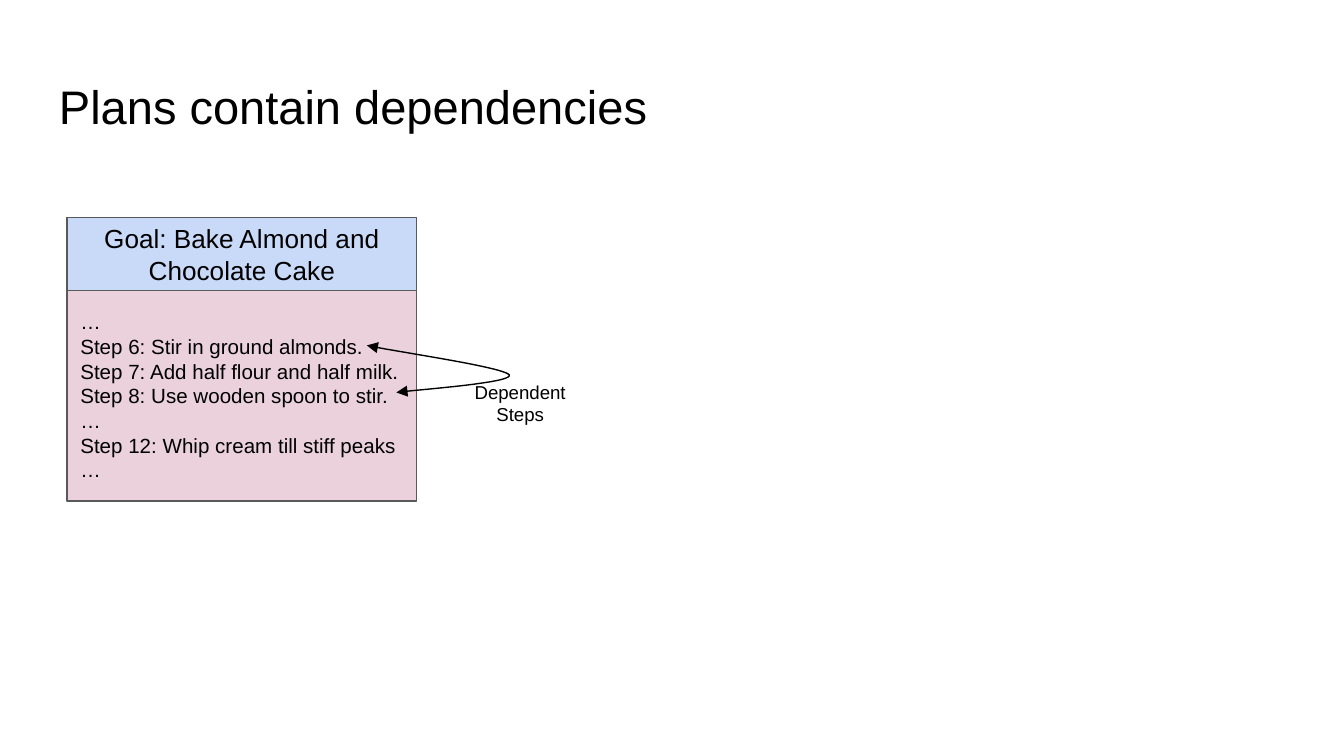
from lxml import etree
from pptx import Presentation
from pptx.dml.color import RGBColor
from pptx.enum.shapes import MSO_SHAPE
from pptx.enum.text import MSO_ANCHOR, PP_ALIGN
from pptx.oxml.ns import qn
from pptx.util import Inches, Pt

RECTANGLE = MSO_SHAPE.RECTANGLE
TOP, MIDDLE = MSO_ANCHOR.TOP, MSO_ANCHOR.MIDDLE
LEFT, CENTER = PP_ALIGN.LEFT, PP_ALIGN.CENTER

FONT = "Arial"
COLORS = {
    "text": "000000",
    "goal": "C9DAF8",
    "steps": "EAD1DC",
    "border": "595959",
    "arrow": "000000",
}
PLAN_LEFT, PLAN_TOP, PLAN_WIDTH = 0.5, 1.62, 2.6
GOAL_HEIGHT, STEPS_HEIGHT = 0.54, 1.57
STEPS = [
    "…",
    "Step 6: Stir in ground almonds.",
    "Step 7: Add half flour and half milk.",
    "Step 8: Use wooden spoon to stir.",
    "…",
    "Step 12: Whip cream till stiff peaks",
    "…",
]
DEPENDENCY_CURVES = [
    [(2.73, 2.57), (2.9, 2.61), (3.75, 2.73), (3.79, 2.79)],
    [(3.79, 2.79), (3.82, 2.85), (3.09, 2.9), (2.95, 2.92)],
]
CURVE_STEPS = 24


def color(name):
    return RGBColor.from_string(COLORS[name])


def write_text(shape, lines, size, alignment=LEFT, anchor=TOP):
    text_frame = shape.text_frame
    text_frame.word_wrap = True
    text_frame.vertical_anchor = anchor
    text_frame.margin_left = text_frame.margin_right = Inches(0.1)
    text_frame.margin_top = text_frame.margin_bottom = Inches(0.1)
    text_frame.text = "\n".join(lines)
    for paragraph in text_frame.paragraphs:
        paragraph.alignment = alignment
        for run in paragraph.runs:
            run.font.name = FONT
            run.font.size = Pt(size)
            run.font.color.rgb = color("text")


def add_label(slide, box, lines, size, alignment=LEFT):
    label = slide.shapes.add_textbox(*map(Inches, box))
    write_text(label, lines, size, alignment)


def add_panel(group, top, height, fill, lines, size, alignment):
    box = (PLAN_LEFT, top, PLAN_WIDTH, height)
    panel = group.shapes.add_shape(RECTANGLE, *map(Inches, box))
    panel.shadow.inherit = False
    panel.fill.solid()
    panel.fill.fore_color.rgb = color(fill)
    panel.line.color.rgb = color("border")
    panel.line.width = Pt(0.75)
    write_text(panel, lines, size, alignment, MIDDLE)


def bezier_point(controls, t):
    weights = ((1 - t) ** 3, 3 * t * (1 - t) ** 2, 3 * t ** 2 * (1 - t), t ** 3)
    return tuple(
        Inches(sum(weight * value for weight, value in zip(weights, axis)))
        for axis in zip(*controls)
    )


def add_double_arrow(slide, curves):
    points = [
        bezier_point(controls, step / CURVE_STEPS)
        for controls in curves
        for step in range(1, CURVE_STEPS + 1)
    ]
    builder = slide.shapes.build_freeform(*bezier_point(curves[0], 0))
    builder.add_line_segments(points, close=False)
    arrow = builder.convert_to_shape()
    arrow.shadow.inherit = False
    arrow.fill.background()
    arrow.line.color.rgb = color("arrow")
    arrow.line.width = Pt(0.75)
    line = arrow.line._get_or_add_ln()
    for end in ("a:headEnd", "a:tailEnd"):
        etree.SubElement(line, qn(end), type="triangle", w="med", len="med")


def main():
    presentation = Presentation()
    presentation.slide_width = Inches(10)
    presentation.slide_height = Inches(10) * 9 // 16
    slide = presentation.slides.add_slide(presentation.slide_layouts[6])

    add_label(slide, (0.34, 0.48, 9.32, 0.63), ["Plans contain dependencies"], 25.2)
    plan = slide.shapes.add_group_shape()
    add_panel(plan, PLAN_TOP, GOAL_HEIGHT, "goal",
              ["Goal: Bake Almond and Chocolate Cake"], 14, CENTER)
    add_panel(plan, PLAN_TOP + GOAL_HEIGHT, STEPS_HEIGHT, "steps", STEPS, 11, LEFT)
    add_double_arrow(slide, DEPENDENCY_CURVES)
    add_label(slide, (3.43, 2.73, 0.88, 0.52), ["Dependent", "Steps"], 10, CENTER)

    presentation.save("out.pptx")


if __name__ == "__main__":
    main()
